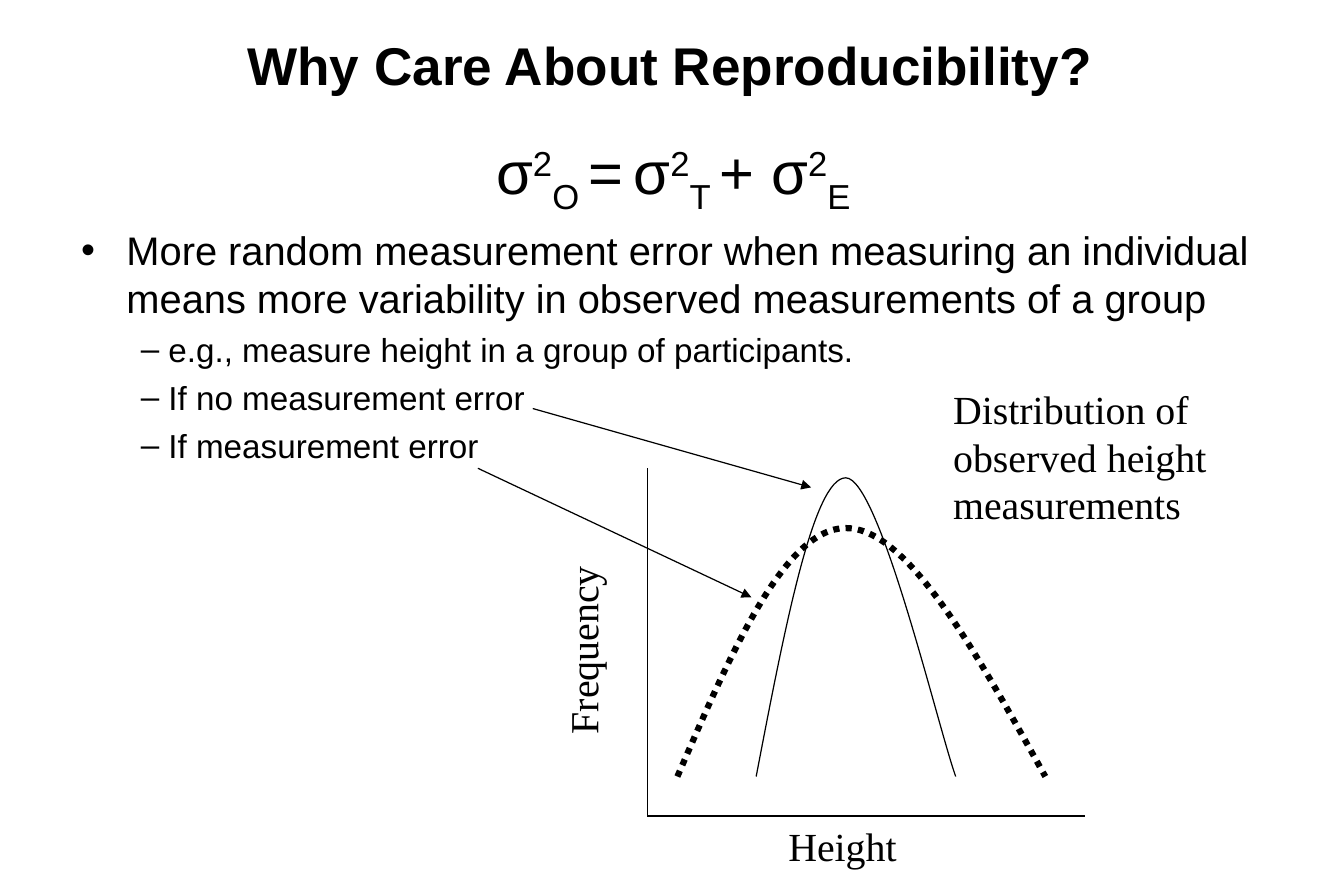
from lxml import etree
from pptx import Presentation
from pptx.dml.color import RGBColor
from pptx.enum.dml import MSO_LINE
from pptx.enum.shapes import MSO_CONNECTOR
from pptx.enum.text import MSO_ANCHOR, PP_ALIGN
from pptx.oxml.ns import qn
from pptx.util import Inches, Pt

CENTER = PP_ALIGN.CENTER
MIDDLE = MSO_ANCHOR.MIDDLE
STRAIGHT = MSO_CONNECTOR.STRAIGHT
DOTTED = MSO_LINE.ROUND_DOT
BLACK = "000000"
SANS = "Arial"
SERIF = "Times New Roman"
SUPER, SUB = 30, -25

EQUATION = [
    ("σ", 0), ("2", SUPER), ("O ", SUB),
    ("=", 0), (" ", SUB), ("σ", 0), ("2", SUPER), ("T ", SUB),
    ("+ σ", 0), ("2", SUPER), ("E", SUB), (" ", 0),
]
MAIN_POINT = ("More random measurement error when measuring an individual "
              "means more variability in observed measurements of a group")
EXAMPLES = [
    " e.g., measure height in a group of participants.",
    " If no measurement error",
    " If measurement error",
]


def color(value):
    """Turn a hex string into a colour."""
    return RGBColor.from_string(value)


class SlideBuilder:
    """Holds the text and line style and the slide being built."""

    def __init__(self, page):
        """Keep the slide to draw on."""
        self.page = page

    def style(self, paragraph, size, font=SANS, bold=False):
        """Set the font of a whole paragraph."""
        paragraph.font.name = font
        paragraph.font.size = Pt(size)
        paragraph.font.bold = bold
        paragraph.font.color.rgb = color(BLACK)

    def stroke(self, line, width):
        """Set a plain black line."""
        line.color.rgb = color(BLACK)
        line.width = Pt(width)

    def title(self, text, left, top, width, height):
        """Place and fill the title placeholder."""
        box = self.page.shapes.title
        box.left, box.top, box.width, box.height = map(Inches, (left, top, width, height))
        frame = box.text_frame
        frame.text = text
        frame.vertical_anchor = MIDDLE
        frame.paragraphs[0].alignment = CENTER
        self.style(frame.paragraphs[0], 32, bold=True)

    def text_box(self, left, top, width, height):
        """Add an empty wrapping text box."""
        box = self.page.shapes.add_textbox(*map(Inches, (left, top, width, height)))
        box.text_frame.word_wrap = True
        return box

    def label(self, text, left, top, width, height, rotation=0):
        """Add a serif chart label."""
        box = self.text_box(left, top, width, height)
        box.rotation = rotation
        paragraph = box.text_frame.paragraphs[0]
        paragraph.text = text
        self.style(paragraph, 24, SERIF)

    def item(self, paragraph, spans, size, margin, indent, bullet=None):
        """Fill a paragraph with spans, a hanging indent and a bullet."""
        self.style(paragraph, size)
        paragraph.space_before = Pt(size * 0.24)
        properties = paragraph._p.get_or_add_pPr()
        properties.set("marL", str(Inches(margin)))
        properties.set("indent", str(Inches(indent)))
        if bullet:
            defaults = properties.find(qn("a:defRPr"))
            defaults.addprevious(etree.Element(qn("a:buFont"), typeface=SANS))
            defaults.addprevious(etree.Element(qn("a:buChar"), char=bullet))
        for text, baseline in spans:
            span = paragraph.add_run()
            span.text = text
            if baseline:
                span.font._element.set("baseline", str(baseline * 1000))

    def line(self, start, end, arrow=False):
        """Add a thin line, with an arrowhead at its end if asked."""
        points = map(Inches, (*start, *end))
        connector = self.page.shapes.add_connector(STRAIGHT, *points)
        self.stroke(connector.line, 0.75)
        if arrow:
            etree.SubElement(connector.line._get_or_add_ln(), qn("a:tailEnd"), type="triangle")
        etree.SubElement(connector._element.spPr, qn("a:effectLst"))

    def curve(self, points, width, dash=None):
        """Add an open outline of cubic curves through a start and point triplets."""
        start, *corners = [tuple(map(Inches, point)) for point in points]
        builder = self.page.shapes.build_freeform(*start)
        builder.add_line_segments(corners, close=False)
        shape = builder.convert_to_shape()
        steps = list(shape._element.iter(qn("a:lnTo")))
        for first in range(0, len(steps), 3):
            cubic = etree.Element(qn("a:cubicBezTo"))
            steps[first].addprevious(cubic)
            for step in steps[first:first + 3]:
                cubic.append(step[0])
                step.getparent().remove(step)
        shape.shadow.inherit = False
        shape.fill.background()
        self.stroke(shape.line, width)
        if dash:
            shape.line.dash_style = dash


def main():
    """Build the slide and save it."""
    deck = Presentation()
    deck.slide_width, deck.slide_height = Inches(11.25), Inches(7.5)
    slide = SlideBuilder(deck.slides.add_slide(deck.slide_layouts[5]))

    slide.title("Why Care About Reproducibility?", 0.83, 0.25, 9.56, 0.58)
    frame = slide.text_box(0.58, 1.08, 10.25, 6).text_frame
    equation = frame.paragraphs[0]
    equation.alignment = CENTER
    slide.item(equation, EQUATION, 36, 0.38, -0.38)
    slide.item(frame.add_paragraph(), [(MAIN_POINT, 0)], 24, 0.38, -0.38, "•")
    for example in EXAMPLES:
        paragraph = frame.add_paragraph()
        paragraph.level = 1
        slide.item(paragraph, [(example, 0)], 20, 0.57, -0.07, "–")

    origin = (5.42, 6.83)
    slide.line((5.42, 3.92), origin)
    slide.line(origin, (9.08, 6.83))
    slide.label("Height", 6.5, 6.83, 1.75, 0.5)
    slide.label("Frequency", 4, 5.12, 1.75, 0.5, 270)
    slide.label("Distribution of observed height measurements", 7.88, 3.17, 3.08, 1.3)

    slide.curve([(6.33, 6.5), (6.57, 5.25), (6.81, 4), (7.08, 4),
                 (7.36, 4), (7.85, 6.08), (8, 6.5)], 0.75)
    slide.curve([(5.67, 6.5), (6.12, 5.46), (6.57, 4.42), (7.08, 4.42),
                 (7.6, 4.42), (8.17, 5.46), (8.75, 6.5)], 3.75, DOTTED)
    slide.line((4, 3.92), (6.29, 5), arrow=True)
    slide.line((4.46, 3.42), (6.79, 4.08), arrow=True)

    deck.save("out.pptx")


if __name__ == "__main__":
    main()
